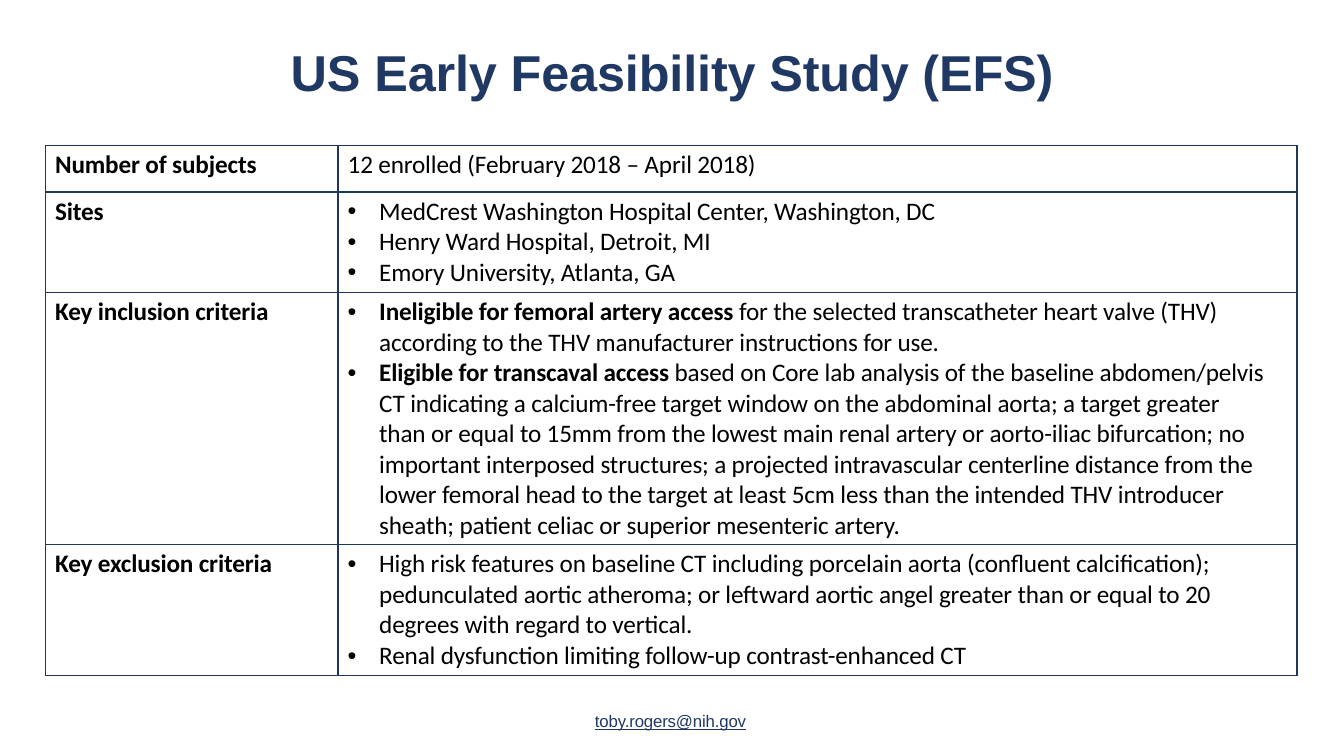
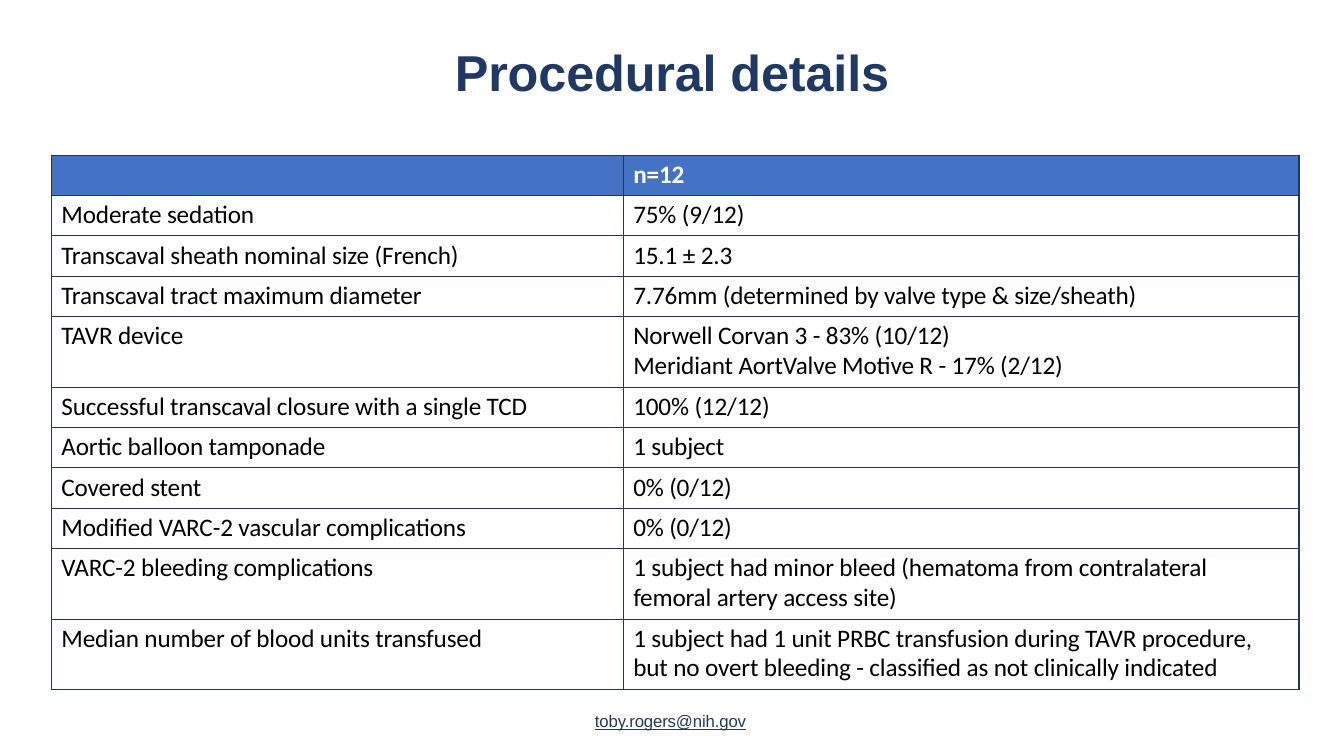
"""Build two slides on the early feasibility study: its design and its procedures."""
from lxml import etree
from pptx import Presentation
from pptx import util as u
from pptx.dml import color
from pptx.enum import text
from pptx.oxml import ns

Pt = u.Pt
NAVY, BORDER, HEADER, BLACK, WHITE = "203864", "203764", "4472C4", "000000", "FFFFFF"
SLIDE_WIDTH, SLIDE_HEIGHT = 960, 540
TITLE_BOX = (33, 26.6, 894, 45.4)
FOOTER_BOX = (425, 507.6, 112, 15.2)
CELL_LEFT, CELL_RIGHT, BULLET_INDENT = 7, 18.5, 22.5
CONTACT = "toby.rogers@nih.gov"

STUDY = {
    "title": "US Early Feasibility Study (EFS)",
    "origin": (32.4, 104.2),
    "columns": (209, 685),
    "heights": (33, 72, 180, 93.5),
    "line_spacing": 0.99,
    "cell_top": 2.9,
    "header": False,
    "bold_labels": True,
    "rows": [
        ("Number of subjects", ["12 enrolled (February 2018 – April 2018)"]),
        ("Sites", [
            ("", "MedCrest Washington Hospital Center, Washington, DC"),
            ("", "Henry Ward Hospital, Detroit, MI"),
            ("", "Emory University, Atlanta, GA"),
        ]),
        ("Key inclusion criteria", [
            ("Ineligible for femoral artery access ",
             "for the selected transcatheter heart valve (THV) according to the THV "
             "manufacturer instructions for use."),
            ("Eligible for transcaval access ",
             "based on Core lab analysis of the baseline abdomen/pelvis CT indicating a "
             "calcium-free target window on the abdominal aorta; a target greater than or "
             "equal to 15mm from the lowest main renal artery or aorto-iliac bifurcation; "
             "no important interposed structures; a projected intravascular centerline "
             "distance from the lower femoral head to the target at least 5cm less than the "
             "intended THV introducer sheath; patient celiac or superior mesenteric artery."),
        ]),
        ("Key exclusion criteria", [
            ("", "High risk features on baseline CT including porcelain aorta (confluent "
                 "calcification); pedunculated aortic atheroma; or leftward aortic angel "
                 "greater than or equal to 20 degrees with regard to vertical."),
            ("", "Renal dysfunction limiting follow-up contrast-enhanced CT"),
        ]),
    ],
}

ONE_LINE, TWO_LINES = 28.8, 50.5
PROCEDURE = {
    "title": "Procedural details",
    "origin": (36.9, 110.9),
    "columns": (408.5, 482.5),
    "heights": [ONE_LINE] * 4 + [TWO_LINES] + [ONE_LINE] * 4 + [TWO_LINES] * 2,
    "line_spacing": 0.96,
    "cell_top": 3.3,
    "header": True,
    "bold_labels": False,
    "rows": [
        ("", ["n=12"]),
        ("Moderate sedation", ["75% (9/12)"]),
        ("Transcaval sheath nominal size (French)", ["15.1 ± 2.3"]),
        ("Transcaval tract maximum diameter",
         ["7.76mm (determined by valve type & size/sheath)"]),
        ("TAVR device",
         ["Norwell Corvan 3 - 83% (10/12)", "Meridiant AortValve Motive R - 17% (2/12)"]),
        ("Successful transcaval closure with a single TCD", ["100% (12/12)"]),
        ("Aortic balloon tamponade", ["1 subject"]),
        ("Covered stent", ["0% (0/12)"]),
        ("Modified VARC-2 vascular complications", ["0% (0/12)"]),
        ("VARC-2 bleeding complications",
         ["1 subject had minor bleed (hematoma from contralateral femoral artery access site)"]),
        ("Median number of blood units transfused",
         ["1 subject had 1 unit PRBC transfusion during TAVR procedure, but no overt "
          "bleeding - classified as not clinically indicated"]),
    ],
}


def rgb(value):
    """Turn a hex string into a colour."""
    return color.RGBColor.from_string(value)


def add_run(paragraph, words, size, font_name, hue, bold=False, underline=False):
    """Add one formatted run with slightly tightened letters."""
    run = paragraph.add_run()
    run.text = words
    font = run.font
    font.size, font.name, font.bold = Pt(size), font_name, bold
    if underline:
        font.underline = True
    font.color.rgb = rgb(hue)
    run._r.get_or_add_rPr().set("spc", "-10")


def clear_margins(frame, top=0):
    """Remove the insets of a text frame, keeping an optional top one."""
    frame.margin_left = frame.margin_right = frame.margin_bottom = 0
    frame.margin_top = Pt(top)
    frame.vertical_anchor = text.MSO_ANCHOR.TOP
    frame.auto_size = text.MSO_AUTO_SIZE.NONE


def add_bullet(paragraph):
    """Give a paragraph a hanging round bullet."""
    properties = paragraph._p.get_or_add_pPr()
    properties.set("marL", str(Pt(BULLET_INDENT)))
    properties.set("indent", str(-Pt(BULLET_INDENT)))
    etree.SubElement(properties, ns.qn("a:buFont")).set("typeface", "Arial")
    etree.SubElement(properties, ns.qn("a:buChar")).set("char", "•")


def add_borders(cell):
    """Draw a thin line on all four sides of a cell."""
    properties = cell._tc.get_or_add_tcPr()
    for side in ("lnL", "lnR", "lnT", "lnB"):
        line = etree.SubElement(properties, ns.qn("a:" + side), w=str(Pt(1)))
        fill = etree.SubElement(line, ns.qn("a:solidFill"))
        etree.SubElement(fill, ns.qn("a:srgbClr"), val=BORDER)


def fill_cell(cell, items, content, is_header, bold):
    """Format a cell and write its paragraphs; a tuple item is a bullet."""
    cell.margin_left, cell.margin_right = Pt(CELL_LEFT), Pt(CELL_RIGHT)
    cell.margin_top, cell.margin_bottom = Pt(content["cell_top"]), 0
    cell.vertical_anchor = text.MSO_ANCHOR.TOP
    add_borders(cell)
    if is_header:
        cell.fill.solid()
        cell.fill.fore_color.rgb = rgb(HEADER)
    else:
        cell.fill.background()
    hue = WHITE if is_header else BLACK
    for index, item in enumerate(items):
        frame = cell.text_frame
        paragraph = frame.add_paragraph() if index else frame.paragraphs[0]
        if isinstance(item, tuple):
            add_bullet(paragraph)
            lead, body = item
        else:
            lead, body = "", item
        paragraph.line_spacing = content["line_spacing"]
        for words, strong in ((lead, True), (body, bold)):
            if words:
                add_run(paragraph, words, 18, "Calibri", hue, strong)


def add_content_table(slide, content):
    """Add the two-column table of a slide."""
    columns, heights, rows = content["columns"], content["heights"], content["rows"]
    left, top = content["origin"]
    table = slide.shapes.add_table(len(rows), len(columns), Pt(left), Pt(top),
                                   Pt(sum(columns)), Pt(sum(heights))).table
    table.first_row, table.horz_banding = content["header"], False
    for column, width in zip(table.columns, columns):
        column.width = Pt(width)
    for index, (label, items) in enumerate(rows):
        table.rows[index].height = Pt(heights[index])
        is_header = content["header"] and index == 0
        fill_cell(table.cell(index, 0), [label], content, is_header, content["bold_labels"])
        fill_cell(table.cell(index, 1), items, content, is_header, is_header)


def add_slide(presentation, content):
    """Add a slide with title, contact line and table."""
    slide = presentation.slides.add_slide(presentation.slide_layouts[5])
    title = slide.shapes.title
    title.left, title.top, title.width, title.height = map(Pt, TITLE_BOX)
    clear_margins(title.text_frame, top=3)
    paragraph = title.text_frame.paragraphs[0]
    paragraph.alignment = text.PP_ALIGN.CENTER
    add_run(paragraph, content["title"], 36, "Arial", NAVY, bold=True)

    footer = slide.shapes.add_textbox(*map(Pt, FOOTER_BOX)).text_frame
    clear_margins(footer)
    footer.word_wrap = True
    add_run(footer.paragraphs[0], CONTACT, 12, "Arial", NAVY, underline=True)
    add_content_table(slide, content)


def main():
    """Build and save the presentation."""
    presentation = Presentation()
    presentation.slide_width, presentation.slide_height = Pt(SLIDE_WIDTH), Pt(SLIDE_HEIGHT)
    for content in (STUDY, PROCEDURE):
        add_slide(presentation, content)
    presentation.save("out.pptx")


if __name__ == "__main__":
    main()
